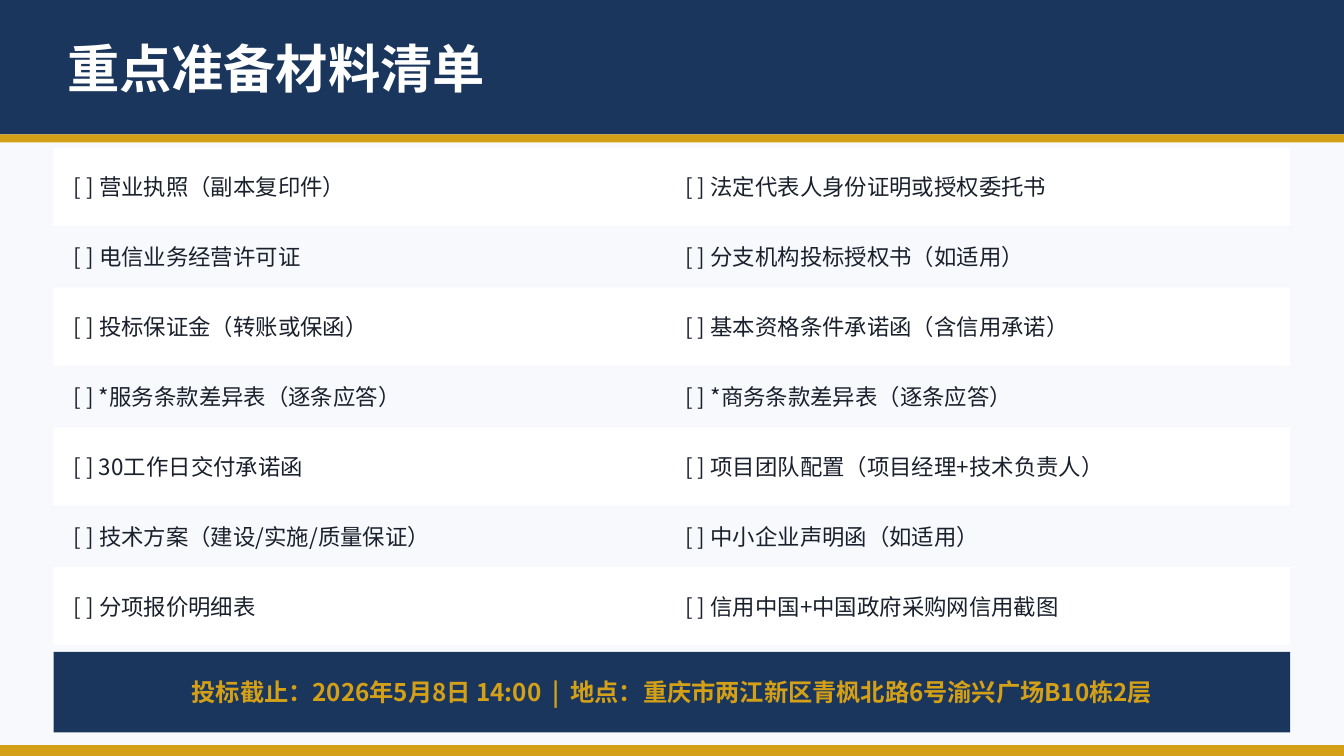
from dataclasses import dataclass

from lxml import etree
from pptx import Presentation
from pptx.dml.color import RGBColor
from pptx.enum.shapes import MSO_SHAPE
from pptx.enum.text import MSO_ANCHOR, PP_ALIGN
from pptx.oxml.ns import qn
from pptx.util import Inches, Pt

RECT = MSO_SHAPE.RECTANGLE
MIDDLE = MSO_ANCHOR.MIDDLE
LEFT = PP_ALIGN.LEFT
CENTER = PP_ALIGN.CENTER


@dataclass(frozen=True)
class Theme:
    font: str = "Noto Sans CJK SC"
    background: str = "F7F9FC"
    navy: str = "1A365D"
    gold: str = "D4A017"
    white: str = "FFFFFF"
    ink: str = "1A202C"
    title_size: int = 28
    item_size: int = 12
    deadline_size: int = 13


class SlideBuilder:
    def __init__(self, slide, theme):
        self.slide = slide
        self.theme = theme

    def background(self, color):
        fill = self.slide.background.fill
        fill.solid()
        fill.fore_color.rgb = RGBColor.from_string(color)

    def bar(self, x, y, w, h, color):
        s = self.slide.shapes.add_shape(RECT, Inches(x), Inches(y), Inches(w), Inches(h))
        s.shadow.inherit = False
        s.fill.solid()
        s.fill.fore_color.rgb = RGBColor.from_string(color)
        s.line.fill.background()

    def text(self, x, y, w, h, text, size, color, bold=False, align=LEFT):
        s = self.slide.shapes.add_textbox(Inches(x), Inches(y), Inches(w), Inches(h))
        tf = s.text_frame
        tf.word_wrap = True
        tf.vertical_anchor = MIDDLE
        tf.margin_left = tf.margin_right = tf.margin_top = tf.margin_bottom = 0
        p = tf.paragraphs[0]
        p.text = text
        p.alignment = align
        p.font.name = self.theme.font
        p.font.size = Pt(size)
        p.font.bold = bold
        p.font.color.rgb = RGBColor.from_string(color)
        props = p._p.pPr.find(qn("a:defRPr"))
        etree.SubElement(props, qn("a:ea"), typeface=self.theme.font)


CHECKLIST = [
    ("营业执照（副本复印件）", "法定代表人身份证明或授权委托书"),
    ("电信业务经营许可证", "分支机构投标授权书（如适用）"),
    ("投标保证金（转账或保函）", "基本资格条件承诺函（含信用承诺）"),
    ("*服务条款差异表（逐条应答）", "*商务条款差异表（逐条应答）"),
    ("30工作日交付承诺函", "项目团队配置（项目经理+技术负责人）"),
    ("技术方案（建设/实施/质量保证）", "中小企业声明函（如适用）"),
    ("分项报价明细表", "信用中国+中国政府采购网信用截图"),
]
DEADLINE = "投标截止：2026年5月8日 14:00  |  地点：重庆市两江新区青枫北路6号渝兴广场B10栋2层"
WIDTH = 10
HEIGHT = WIDTH * 9 / 16
STRIPE = 0.08
COLUMNS = (0.55, 5.1)
FIRST_ROW = 1.15
ROW_STEP = 0.52
ROW_HEIGHT = 0.48
BAND_PAD = 0.05


def main():
    prs = Presentation()
    prs.slide_width = Inches(WIDTH)
    prs.slide_height = Inches(HEIGHT)
    theme = Theme()
    page = SlideBuilder(prs.slides.add_slide(prs.slide_layouts[6]), theme)

    page.background(theme.background)
    page.bar(0, 0, WIDTH, 1, theme.navy)
    page.bar(0, 1, WIDTH, 0.06, theme.gold)
    page.text(0.5, 0.2, 9, 0.6, "重点准备材料清单", theme.title_size, theme.white, bold=True)

    for row, items in enumerate(CHECKLIST):
        y = FIRST_ROW + row * ROW_STEP
        if row % 2 == 0:
            page.bar(0.4, y - BAND_PAD, 9.2, ROW_HEIGHT + 2 * BAND_PAD, theme.white)
        for x, item in zip(COLUMNS, items):
            page.text(x, y, 4.3, ROW_HEIGHT, f"[ ] {item}", theme.item_size, theme.ink)

    page.bar(0.4, 4.85, 9.2, 0.6, theme.navy)
    page.text(0.5, 4.85, 9, 0.6, DEADLINE, theme.deadline_size, theme.gold,
              bold=True, align=CENTER)
    page.bar(0, HEIGHT - STRIPE, WIDTH, STRIPE, theme.gold)

    prs.save("out.pptx")


if __name__ == "__main__":
    main()
